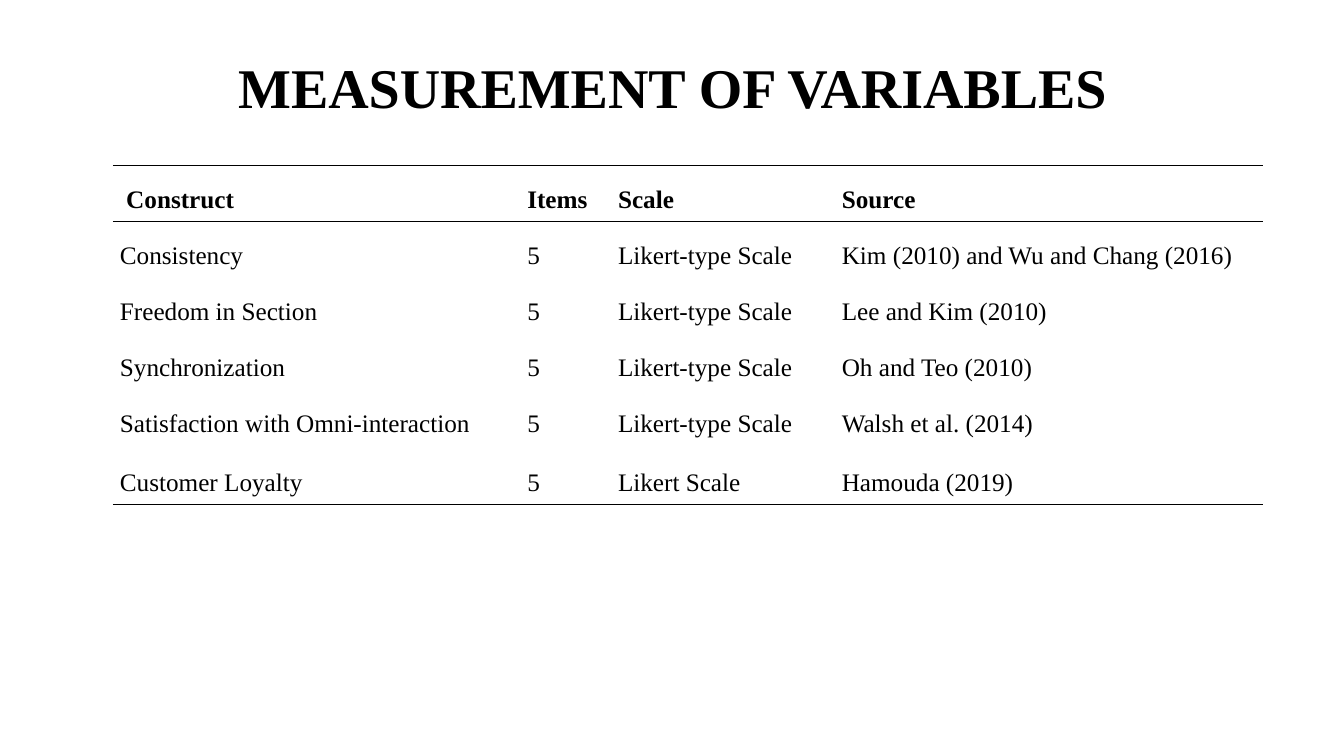
from lxml.etree import SubElement
from pptx import Presentation
from pptx.dml.color import RGBColor
from pptx.enum.text import MSO_ANCHOR, PP_ALIGN
from pptx.oxml.ns import qn
from pptx.util import Inches, Pt

COLORS = {"ink": "000000", "paper": "FFFFFF"}
FONT = "Times New Roman"
COLUMN_WIDTHS = [4.04, 0.9, 2.22, 4.25]
ROW_HEIGHTS = [0.55, 0.55, 0.55, 0.55, 0.59, 0.55]
ROWS = [
    [" Construct", "Items", "Scale", "Source"],
    ["Consistency", "5", "Likert-type Scale", "Kim (2010) and Wu and Chang (2016)"],
    ["Freedom in Section", "5", "Likert-type Scale", "Lee and Kim (2010)"],
    ["Synchronization", "5", "Likert-type Scale", "Oh and Teo (2010)"],
    ["Satisfaction with Omni-interaction", "5", "Likert-type Scale", "Walsh et al. (2014)"],
    ["Customer Loyalty", "5", "Likert Scale", "Hamouda (2019)"],
]


def add_span(para, text, size, bold):
    """Add one formatted run to a paragraph."""
    span = para.add_run()
    span.text = text
    span.font.name = FONT
    span.font.size = Pt(size)
    span.font.bold = bold
    span.font.color.rgb = RGBColor.from_string(COLORS["ink"])


def set_borders(cell, ruled_sides):
    """Rule the given sides of a cell and clear the others."""
    properties = cell._tc.get_or_add_tcPr()
    for side in ("L", "R", "T", "B"):
        line = SubElement(properties, qn(f"a:ln{side}"), w=str(Pt(1)))
        if side in ruled_sides:
            fill = SubElement(line, qn("a:solidFill"))
            SubElement(fill, qn("a:srgbClr"), val=COLORS["ink"])
        else:
            SubElement(line, qn("a:noFill"))


def fill_cell(cell, text, bold, ruled_sides):
    """Write and format one table cell."""
    cell.margin_left = cell.margin_right = Inches(0.07)
    cell.margin_top = cell.margin_bottom = Inches(0.07)
    set_borders(cell, ruled_sides)
    cell.fill.background()
    para = cell.text_frame.paragraphs[0]
    para.alignment = PP_ALIGN.JUSTIFY
    para.line_spacing = 1.5
    add_span(para, text, 18, bold)


def add_title(page, left, top, width, height):
    """Place the slide title in its placeholder."""
    title = page.shapes.title
    title.left, title.top = Inches(left), Inches(top)
    title.width, title.height = Inches(width), Inches(height)
    title.text_frame.vertical_anchor = MSO_ANCHOR.MIDDLE
    para = title.text_frame.paragraphs[0]
    para.alignment = PP_ALIGN.CENTER
    para.line_spacing = 0.9
    add_span(para, "MEASUREMENT OF VARIABLES", 40, True)


def add_variables_table(page, left, top, width, height):
    """Place the table of constructs with rules around header and foot."""
    frame = page.shapes.add_table(len(ROWS), len(COLUMN_WIDTHS), Inches(left),
                                  Inches(top), Inches(width), Inches(height))
    table = frame.table
    table.first_row = table.horz_banding = False
    for column, column_width in zip(table.columns, COLUMN_WIDTHS):
        column.width = Inches(column_width)
    for row, row_height in zip(table.rows, ROW_HEIGHTS):
        row.height = Inches(row_height)
    ruled_sides = {0: "TB", 1: "T", len(ROWS) - 1: "B"}
    for row_index, texts in enumerate(ROWS):
        for column_index, text in enumerate(texts):
            fill_cell(table.cell(row_index, column_index), text,
                      row_index == 0, ruled_sides.get(row_index, ""))


def main():
    """Build and save the deck."""
    deck = Presentation()
    deck.slide_width, deck.slide_height = Inches(13.33), Inches(7.5)
    page = deck.slides.add_slide(deck.slide_layouts[5])
    page.background.fill.solid()
    page.background.fill.fore_color.rgb = RGBColor.from_string(COLORS["paper"])
    add_title(page, 0.92, 0.4, 11.5, 0.99)
    add_variables_table(page, 1.12, 1.64, sum(COLUMN_WIDTHS), sum(ROW_HEIGHTS))
    deck.save("out.pptx")


if __name__ == "__main__":
    main()
